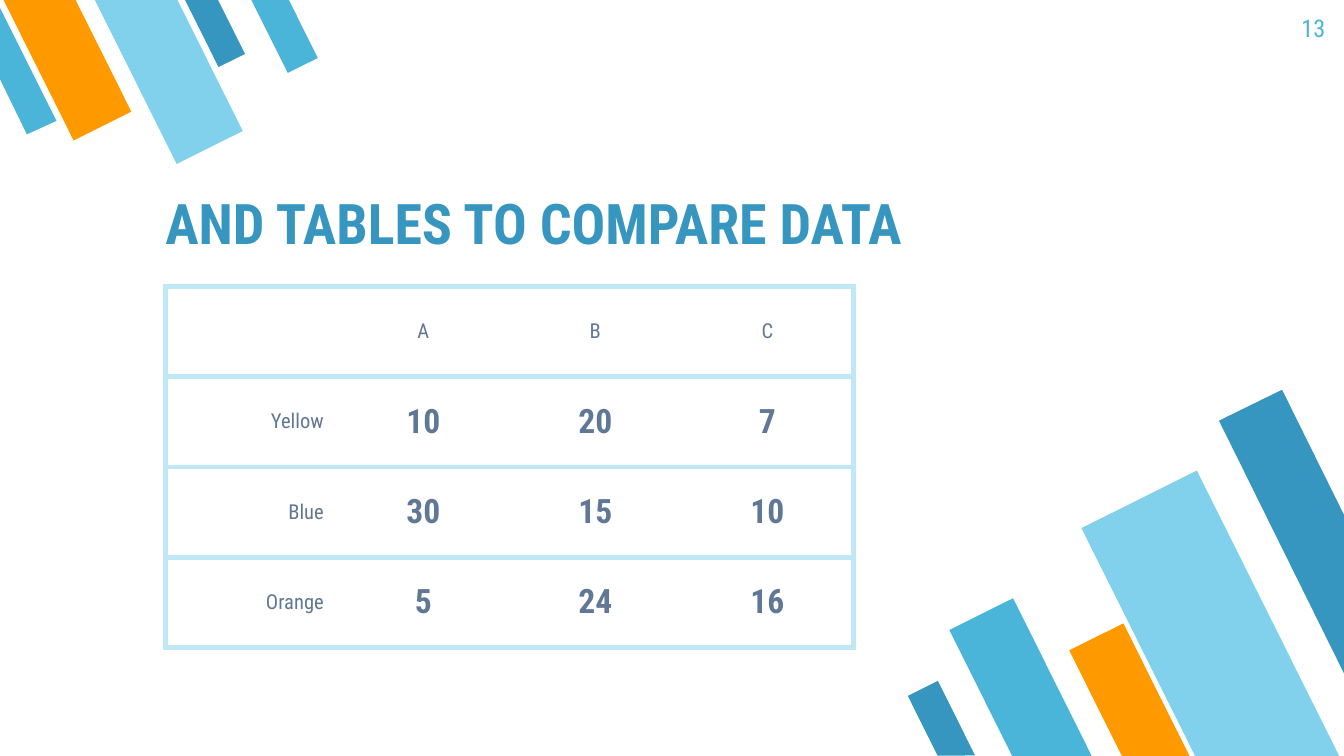
from typing import NamedTuple

from lxml.etree import SubElement
from pptx import Presentation
from pptx.dml.color import RGBColor
from pptx.enum.shapes import MSO_SHAPE
from pptx.enum.text import MSO_ANCHOR, MSO_AUTO_SIZE, PP_ALIGN
from pptx.oxml.ns import qn
from pptx.util import Inches, Pt

COLORS = {
    "deep": "3796BF",
    "mid": "4BB5D9",
    "light": "81D1EC",
    "pale": "C0E7F6",
    "orange": "FF9900",
    "slate": "607896",
}
FONT = "Roboto Condensed"
GRID_COLUMNS, GRID_ROWS = 100, 56.25
UNIT = Inches(0.1)
TOP_ANGLE, BOTTOM_ANGLE = 333.5, 153.5
BORDER = Pt(3)


class Area(NamedTuple):
    col: float
    row: float
    cols: float
    rows: float


class Stripe(NamedTuple):
    area: Area
    angle: float
    color: str


class CutStripe(NamedTuple):
    corners: tuple
    color: str


class TextStyle(NamedTuple):
    size: float
    color: str
    bold: bool = False
    align: PP_ALIGN = PP_ALIGN.LEFT


STRIPES = [
    Stripe(Area(73.3, 45, 5.3, 13.2), BOTTOM_ANGLE, "mid"),
    Stripe(Area(85.3, 35.9, 9.6, 23.9), BOTTOM_ANGLE, "light"),
    Stripe(Area(81.8, 46.8, 4.5, 11.1), BOTTOM_ANGLE, "orange"),
    Stripe(Area(68.8, 50.9, 2.5, 6.2), BOTTOM_ANGLE, "deep"),
    Stripe(Area(14.9, -0.8, 2.2, 5.6), TOP_ANGLE, "deep"),
    Stripe(Area(2.6, -1.8, 4.8, 11.8), TOP_ANGLE, "orange"),
    Stripe(Area(9.8, -2, 5.5, 13.7), TOP_ANGLE, "light"),
    Stripe(Area(19.9, -1, 2.5, 6.2), TOP_ANGLE, "mid"),
]
CUT_STRIPES = [
    CutStripe(((95.4, 29), (90.7, 31.3), (100, 50.1), (100, 38.3)), "deep"),
    CutStripe(((2, 10), (4.2, 9), (0, 0.6), (0, 5.9)), "mid"),
]
TITLE_AREA = Area(11.3, 12.6, 63, 7.4)
NUMBER_AREA = Area(93.6, 0, 6, 4.3)
TABLE_AREA = Area(12.3, 21.3, 51.2, 26.9)
COMPARISON = [
    ("", "A", "B", "C"),
    ("Yellow", "10", "20", "7"),
    ("Blue", "30", "15", "10"),
    ("Orange", "5", "24", "16"),
]
TITLE_STYLE = TextStyle(30, "deep", True)
NUMBER_STYLE = TextStyle(13, "mid", align=PP_ALIGN.RIGHT)
HEADER_STYLE = TextStyle(11, "slate", align=PP_ALIGN.CENTER)
LABEL_STYLE = TextStyle(11, "slate", align=PP_ALIGN.RIGHT)
VALUE_STYLE = TextStyle(18, "slate", True, PP_ALIGN.CENTER)


def apply(target, formats: dict) -> None:
    for name, value in formats.items():
        setattr(target, name, value)


def place(area: tuple) -> list:
    return [round(length * UNIT) for length in area]


def rgb(color: str) -> RGBColor:
    return RGBColor.from_string(COLORS[color])


def paint(shape, color: str) -> None:
    shape.shadow.inherit = False
    shape.fill.solid()
    shape.fill.fore_color.rgb = rgb(color)
    shape.line.fill.background()


def draw_stripe(slide, stripe: Stripe) -> None:
    shape = slide.shapes.add_shape(MSO_SHAPE.FLOWCHART_MANUAL_INPUT, *place(stripe.area))
    shape.rotation = stripe.angle
    shape._element.spPr.find(qn("a:xfrm")).set("flipH", "1")
    paint(shape, stripe.color)


def draw_cut_stripe(slide, stripe: CutStripe) -> None:
    start, *others = [place(corner) for corner in stripe.corners]
    builder = slide.shapes.build_freeform(*start)
    builder.add_line_segments(others, close=True)
    paint(builder.convert_to_shape(), stripe.color)


def write(frame, text: str, style: TextStyle) -> None:
    paragraph = frame.paragraphs[0]
    paragraph.alignment = style.align
    run = paragraph.add_run()
    run.text = text
    apply(run.font, {"name": FONT, "size": Pt(style.size), "bold": style.bold})
    run.font.color.rgb = rgb(style.color)


def fill_text_area(shape, area: Area, text: str, style: TextStyle, anchor: MSO_ANCHOR) -> None:
    apply(shape, dict(zip(("left", "top", "width", "height"), place(area))))
    margins = ("margin_left", "margin_top", "margin_right", "margin_bottom")
    apply(shape.text_frame, {
        "word_wrap": True,
        "auto_size": MSO_AUTO_SIZE.NONE,
        "vertical_anchor": anchor,
        **dict.fromkeys(margins, Inches(0.1)),
    })
    write(shape.text_frame, text, style)


def add_border(cell, side: str, visible: bool) -> None:
    line = SubElement(cell._tc.get_or_add_tcPr(), qn(f"a:ln{side}"), w=str(BORDER))
    if visible:
        fill = SubElement(line, qn("a:solidFill"))
        SubElement(fill, qn("a:srgbClr"), val=COLORS["pale"])
    else:
        SubElement(line, qn("a:noFill"))


def cell_style(row: int, column: int) -> TextStyle:
    if row == 0:
        return HEADER_STYLE
    return LABEL_STYLE if column == 0 else VALUE_STYLE


def draw_table(slide, rows: list, area: Area) -> None:
    last = len(rows[0]) - 1
    table = slide.shapes.add_table(len(rows), last + 1, *place(area)).table
    apply(table, {"first_row": False, "horz_banding": False})
    for r, values in enumerate(rows):
        for c, value in enumerate(values):
            cell = table.cell(r, c)
            apply(cell, {
                "vertical_anchor": MSO_ANCHOR.MIDDLE,
                "margin_left": Inches(0.1),
                "margin_right": Inches(0.1),
                "margin_top": Inches(0.07),
                "margin_bottom": Inches(0.07),
            })
            borders = {"L": c == 0, "R": c == last, "T": True, "B": True}
            for side, visible in borders.items():
                add_border(cell, side, visible)
            cell.fill.background()
            if value:
                write(cell.text_frame, value, cell_style(r, c))


def main() -> None:
    deck = Presentation()
    apply(deck, {
        "slide_width": round(GRID_COLUMNS * UNIT),
        "slide_height": round(GRID_ROWS * UNIT),
    })
    slide = deck.slides.add_slide(deck.slide_layouts.get_by_name("Title Only"))
    for stripe in STRIPES:
        draw_stripe(slide, stripe)
    for cut_stripe in CUT_STRIPES:
        draw_cut_stripe(slide, cut_stripe)
    fill_text_area(slide.shapes.title, TITLE_AREA, "AND TABLES TO COMPARE DATA",
                   TITLE_STYLE, MSO_ANCHOR.BOTTOM)
    draw_table(slide, COMPARISON, TABLE_AREA)
    page_number = slide.shapes.add_textbox(*place(NUMBER_AREA))
    fill_text_area(page_number, NUMBER_AREA, "13", NUMBER_STYLE, MSO_ANCHOR.TOP)
    deck.save("out.pptx")


if __name__ == "__main__":
    main()
